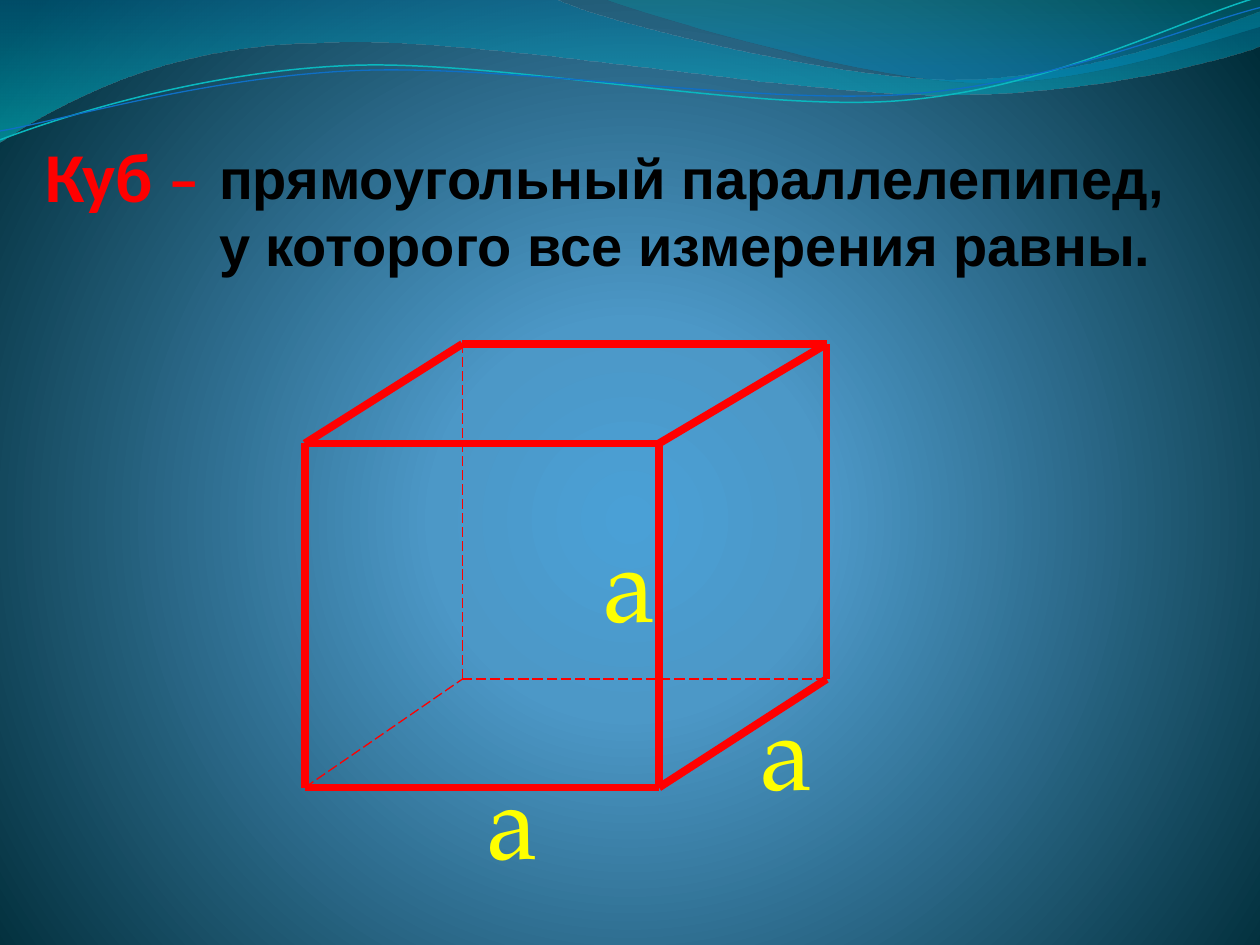
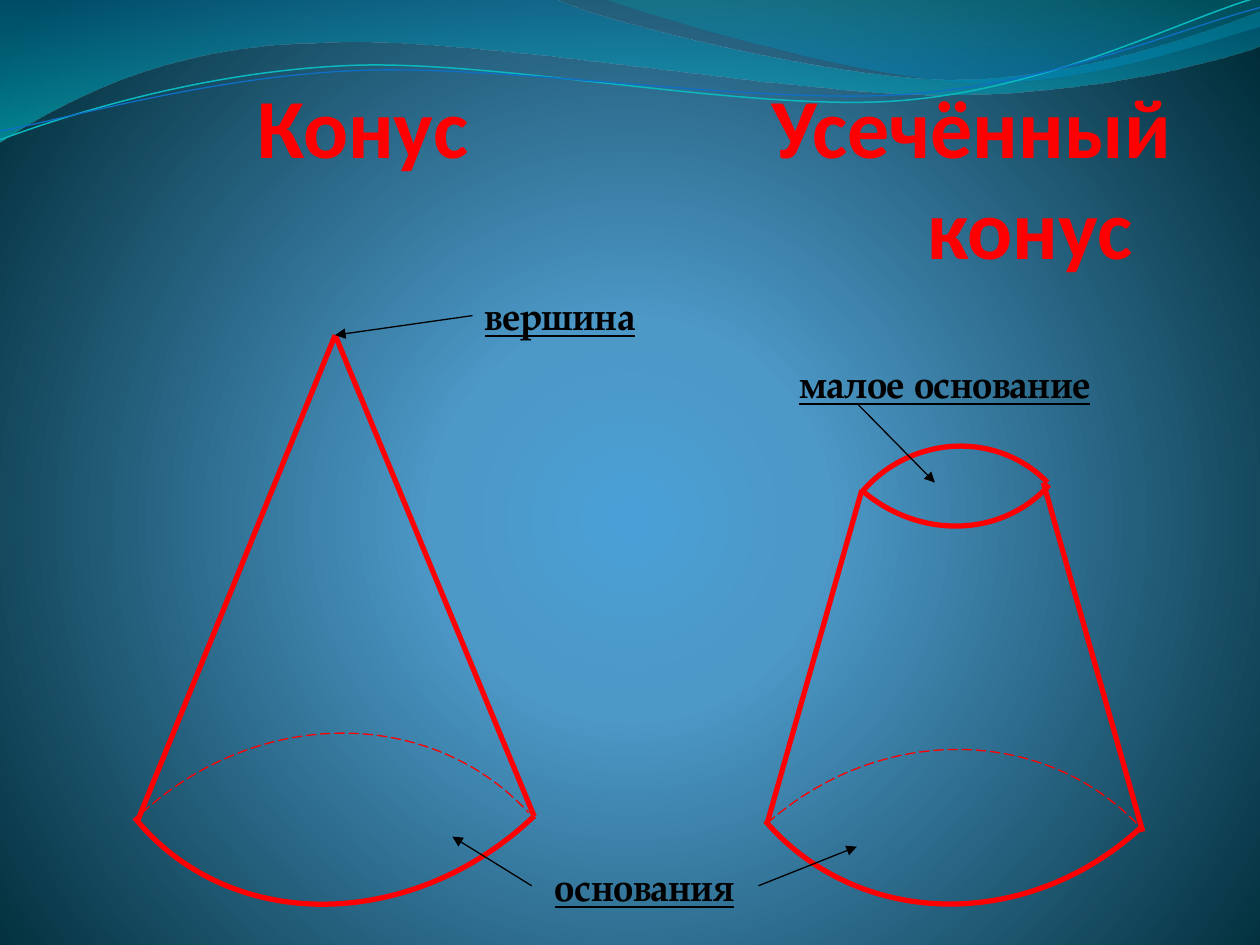
import math

from pptx import Presentation
from pptx.dml.color import RGBColor
from pptx.enum import dml, shapes, text
from pptx.oxml import parse_xml
from pptx.oxml.ns import nsdecls, qn
from pptx.util import Inches, Pt

RED = RGBColor(0xFF, 0x00, 0x00)
BLACK = RGBColor(0x00, 0x00, 0x00)
YELLOW = RGBColor(0xFF, 0xFF, 0x00)
TEAL = RGBColor(0x0A, 0xB8, 0xBF)
BLUE = RGBColor(0x0F, 0x6F, 0xC6)

TITLE = dict(name="Calibri", size=Pt(48), bold=True, color=RED)
SIDE = dict(name="TeX Gyre Pagella", size=Pt(60), color=YELLOW)
LABEL = dict(name="TeX Gyre Pagella", size=Pt(22), bold=True, underline=True, color=BLACK)
DEFINITION = dict(name="Arial", size=Pt(32), bold=True, color=BLACK)

LEFT, CENTER = text.PP_ALIGN.LEFT, text.PP_ALIGN.CENTER
HIDDEN = dict(width=0.75, dashed=True)

# Stops are (position %, colour, opacity %)
PAGE_STOPS = [(0, "4AA0D6", 100), (25, "4C98C7", 100), (100, "002C38", 100)]
PAGE_SHADE = '<a:path path="circle"><a:fillToRect l="10000" t="110000" r="10000" b="100000"/></a:path>'
DOWNWARD = '<a:lin ang="5400000" scaled="0"/>'

# Outlines: a pair is a corner, six numbers are a Bezier curve
BANDS = [
    ([(0, -0.01), (4.4, -0.01), (4.76, 0.17, 6.64, 0.63, 7.58, 0.63),
      (8.53, 0.63, 9.58, 0.26, 10, 0.09), (10.01, 0.36),
      (9.83, 0.44, 8.7, 0.76, 7.46, 0.75), (6.22, 0.75, 3.82, 0.28, 2.57, 0.34),
      (1.29, 0.35, 0.46, 0.83, -0.01, 1.13)],
     [(0, "0074A1", 45), (100, "00C6CF", 55)]),
    ([(4.79, -0.01), (5.09, 0.11, 6.82, 0.62, 7.69, 0.65),
      (8.56, 0.69, 9.61, 0.32, 10, 0.21), (10, 0)],
     [(0, "00A1A9", 30), (80, "008BBF", 45)]),
]
WAVES = [
    ([(0, 1.11), (0.48, 0.93, 1.58, 0.57, 2.77, 0.52),
      (3.95, 0.47, 5.93, 0.89, 7.13, 0.8), (8.33, 0.71, 9.38, 0.15, 9.98, -0.02)],
     TEAL, 0.85),
    ([(0, 1.04), (0.47, 0.96, 1.64, 0.61, 2.83, 0.56),
      (4.03, 0.51, 5.97, 0.83, 7.17, 0.75), (8.36, 0.67, 9.41, 0.21, 10, 0.06)],
     BLUE, 0.75),
]
WAVE_TILT = 357.3
WAVE_CENTER = (4.99, 0.58)


def set_gradient(fill, element, stops, shade):
    """Replace the first fill inside element by a gradient."""
    fill.solid()
    fill.fore_color.rgb = BLACK
    solid = element.find(".//" + qn("a:solidFill"))
    stops_xml = "".join(
        f'<a:gs pos="{pos * 1000}"><a:srgbClr val="{color}">'
        f'<a:alpha val="{alpha * 1000}"/></a:srgbClr></a:gs>'
        for pos, color, alpha in stops)
    gradient = parse_xml(f'<a:gradFill {nsdecls("a")} rotWithShape="1">'
                         f'<a:gsLst>{stops_xml}</a:gsLst>{shade}</a:gradFill>')
    solid.getparent().replace(solid, gradient)


def pairs(part):
    return list(zip(part[::2], part[1::2]))


def level(outline):
    """Undo the tilt of a wave, which its shape gets back as rotation."""
    angle = math.radians(360 - WAVE_TILT)
    cos, sin = math.cos(angle), math.sin(angle)
    cx, cy = WAVE_CENTER
    result = []
    for part in outline:
        turned = [(cx + (x - cx) * cos - (y - cy) * sin,
                   cy + (x - cx) * sin + (y - cy) * cos) for x, y in pairs(part)]
        result.append(tuple(v for point in turned for v in point))
    return result


def add_outline(s, outline, close):
    """Build a freeform through the anchors, then bend its curved segments."""
    anchors = [(Inches(part[-2]), Inches(part[-1])) for part in outline]
    builder = s.shapes.build_freeform(*anchors[0])
    builder.add_line_segments(anchors[1:], close=close)
    sp = builder.convert_to_shape()
    sp.shadow.inherit = False
    segments = sp._element.findall(".//" + qn("a:lnTo"))
    for segment, part in zip(segments, outline[1:]):
        if len(part) == 6:
            points = "".join(f'<a:pt x="{Inches(x) - sp.left}" y="{Inches(y) - sp.top}"/>'
                             for x, y in pairs(part))
            curve = parse_xml(f'<a:cubicBezTo {nsdecls("a")}>{points}</a:cubicBezTo>')
            segment.getparent().replace(segment, curve)
    return sp


def style_line(line, color=RED, width=3, dashed=False):
    line.color.rgb = color
    line.width = Pt(width)
    if dashed:
        line.dash_style = dml.MSO_LINE.LONG_DASH


def add_waves(s):
    for outline, stops in BANDS:
        sp = add_outline(s, outline, True)
        set_gradient(sp.fill, sp._element, stops, DOWNWARD)
        sp.line.fill.background()
    for outline, color, width in WAVES:
        sp = add_outline(s, level(outline), False)
        sp.rotation = WAVE_TILT
        sp.fill.background()
        style_line(sp.line, color, width)


def add_line(s, start, end, **style):
    c = s.shapes.add_connector(shapes.MSO_CONNECTOR.STRAIGHT,
                               *(Inches(v) for v in (*start, *end)))
    style_line(c.line, **style)
    c._element.spPr.append(parse_xml(f'<a:effectLst {nsdecls("a")}/>'))
    return c


def add_arrow(s, start, end):
    c = add_line(s, start, end, color=BLACK, width=0.75)
    c.line._get_or_add_ln().append(parse_xml(f'<a:tailEnd {nsdecls("a")} type="triangle"/>'))
    return c


def add_arc(s, box, rotation, angles=(162, 0), **style):
    sp = s.shapes.add_shape(shapes.MSO_SHAPE.ARC, *(Inches(v) for v in box))
    sp.shadow.inherit = False
    sp.rotation = rotation
    for i, angle in enumerate(angles):
        sp.adjustments[i] = angle
    sp.fill.background()
    style_line(sp.line, **style)


def add_run(p, words, style):
    r = p.add_run()
    r.text = words
    for key, value in style.items():
        if key == "color":
            r.font.color.rgb = value
        else:
            setattr(r.font, key, value)


def add_text(s, box, words, style, align=LEFT):
    sp = s.shapes.add_textbox(*(Inches(v) for v in box))
    tf = sp.text_frame
    tf.word_wrap = True
    tf.auto_size = text.MSO_AUTO_SIZE.SHAPE_TO_FIT_TEXT
    p = tf.paragraphs[0]
    p.alignment = align
    for i, line in enumerate(words.split("\n")):
        if i:
            p.add_line_break()
        add_run(p, line, style)
    return sp


def add_title(s, box):
    """Add an empty title frame that stands on its bottom edge."""
    tf = s.shapes.add_textbox(*(Inches(v) for v in box)).text_frame
    tf.word_wrap = True
    tf.vertical_anchor = text.MSO_ANCHOR.BOTTOM
    for side in ("left", "top", "right", "bottom"):
        setattr(tf, f"margin_{side}", 0)
    return tf


def add_tabbed(p, words, stops):
    """Start each word at its own tab stop."""
    tabs = "".join(f'<a:tab pos="{Inches(stop)}" algn="l"/>' for stop in stops)
    p._p.get_or_add_pPr().append(parse_xml(f'<a:tabLst {nsdecls("a")}>{tabs}</a:tabLst>'))
    add_run(p, "".join("\t" + word for word in words), TITLE)


def draw_cube(s):
    p = add_title(s, (0.31, 1.09, 1.33, 0.63)).paragraphs[0]
    p.alignment = CENTER
    add_run(p, "Куб ", {**TITLE, "size": Pt(40)})
    add_run(p, "– ", {**TITLE, "size": Pt(36)})

    # Corners run top left, top right, bottom right, bottom left
    front = [(2.42, 3.52), (5.23, 3.52), (5.23, 6.25), (2.42, 6.25)]
    back = [(3.67, 2.73), (6.56, 2.73), (6.56, 5.39), (3.67, 5.39)]
    hidden_corner = back[3]
    edges = list(zip(front, back))
    for face in (front, back):
        edges += zip(face, face[1:] + face[:1])
    for start, end in edges:
        style = HIDDEN if hidden_corner in (start, end) else dict(width=4.5)
        add_line(s, start, end, **style)

    add_text(s, (3.67, 5.94, 0.78, 1.11), "а", SIDE, CENTER)
    add_text(s, (5.94, 5.39, 0.78, 1.11), "a", SIDE)
    add_text(s, (4.69, 4.06, 0.62, 1.11), "a", SIDE)
    add_text(s, (1.64, 1.09, 8.36, 1.18),
             "прямоугольный параллелепипед, \nу которого все измерения равны.", DEFINITION)


def draw_cones(s):
    tf = add_title(s, (1.17, 0.78, 8.13, 1.41))
    add_tabbed(tf.paragraphs[0], ["Конус", "Усечённый"], [0.87, 4.95])
    add_tabbed(tf.add_paragraph(), ["конус"], [6.19])

    apex = (2.66, 2.66)
    for start, end in [((1.09, 6.52), apex), ((4.24, 6.48), apex),
                       ((6.84, 3.89), (6.09, 6.53)), ((8.28, 3.83), (9.07, 6.6))]:
        add_line(s, start, end)

    add_arc(s, (0.53, 2.98, 4.61, 4.06), 136.2, (162, 2.34))
    add_arc(s, (0.26, 5.91, 4.53, 4.14), 317.5, **HIDDEN)
    add_arc(s, (5.55, 3.12, 4.3, 3.98), 137.2, (162, 1.17))
    add_arc(s, (5.25, 6.02, 4.38, 4.06), 318.3, **HIDDEN)
    add_arc(s, (6.49, 2.03, 2.03, 2.19), 131.4)
    add_arc(s, (6.57, 3.56, 2.03, 1.95), 315.9, (158.96, 0))

    add_text(s, (4.06, 6.8, 2.11, 0.47), "основания", LABEL, CENTER)
    add_arrow(s, (6.02, 7.03), (6.8, 6.72))
    add_arrow(s, (4.22, 7.03), (3.59, 6.64))
    add_text(s, (5.78, 2.81, 3.44, 0.47), "малое основание", LABEL, CENTER)
    add_arrow(s, (6.8, 3.2), (7.42, 3.83))
    apex_label = add_text(s, (3.75, 2.27, 1.95, 0.47), "вершина", LABEL)
    add_arrow(s, (3.75, 2.5), apex).begin_connect(apex_label, 1)


def main():
    prs = Presentation()
    prs.slide_width, prs.slide_height = Inches(10), Inches(7.5)
    master = prs.slide_master
    set_gradient(master.background.fill, master.element, PAGE_STOPS, PAGE_SHADE)
    for draw in (draw_cube, draw_cones):
        s = prs.slides.add_slide(prs.slide_layouts[6])
        add_waves(s)
        draw(s)
    prs.save("out.pptx")


if __name__ == "__main__":
    main()
